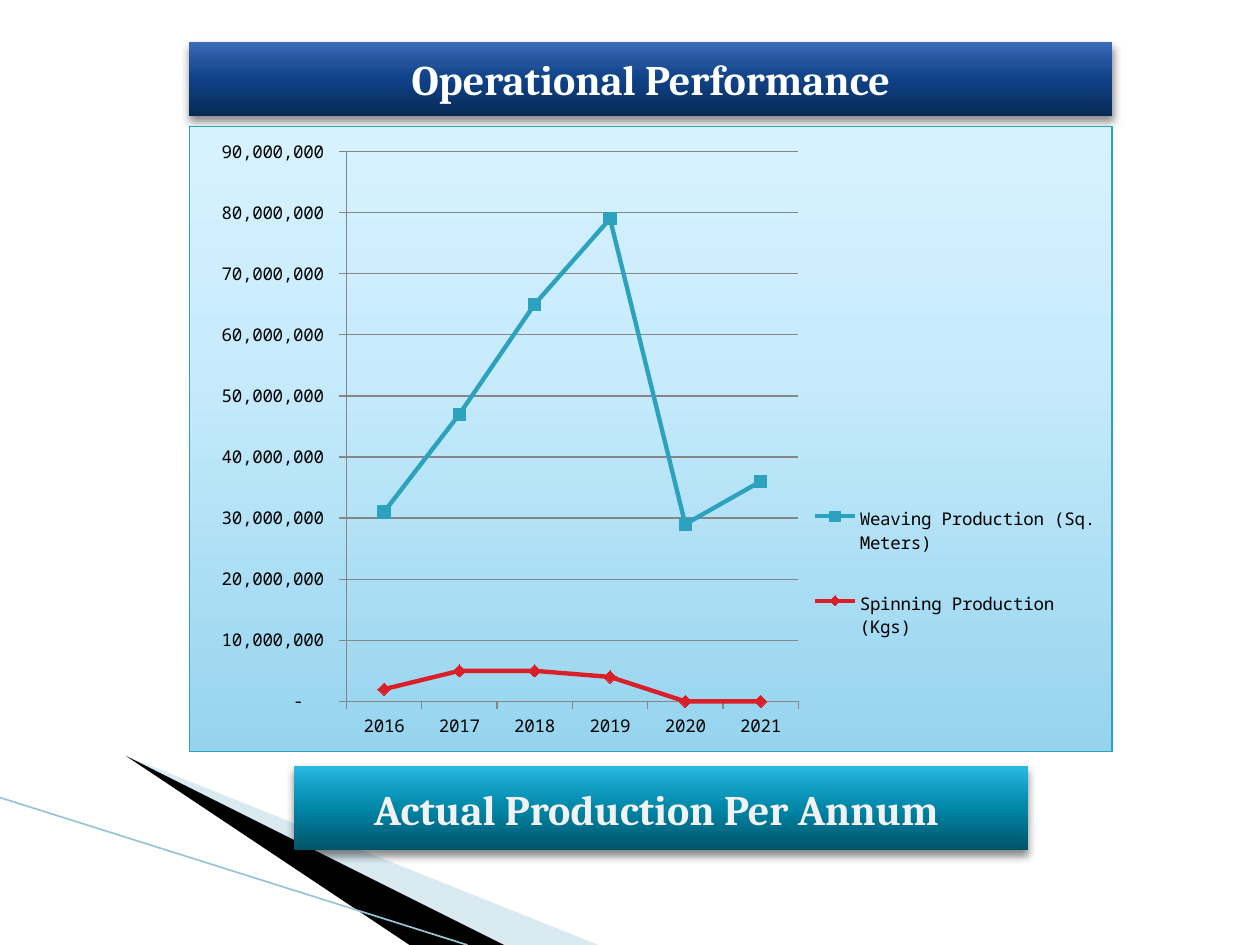
from lxml import etree
from pptx import Presentation
from pptx.chart.data import CategoryChartData
from pptx.dml.color import RGBColor
from pptx.enum.chart import XL_CHART_TYPE, XL_LEGEND_POSITION, XL_MARKER_STYLE, XL_TICK_MARK
from pptx.enum.shapes import MSO_CONNECTOR, MSO_SHAPE
from pptx.enum.text import MSO_ANCHOR, PP_ALIGN
from pptx.oxml import parse_xml
from pptx.oxml.ns import nsdecls, qn
from pptx.util import Inches, Pt

LINE_MARKERS = XL_CHART_TYPE.LINE_MARKERS
RIGHT = XL_LEGEND_POSITION.RIGHT
SQUARE, DIAMOND = XL_MARKER_STYLE.SQUARE, XL_MARKER_STYLE.DIAMOND
OUTSIDE = XL_TICK_MARK.OUTSIDE
STRAIGHT = MSO_CONNECTOR.STRAIGHT
RECTANGLE = MSO_SHAPE.RECTANGLE
MIDDLE = MSO_ANCHOR.MIDDLE
CENTER = PP_ALIGN.CENTER

COLORS = {
    "black": "000000", "white": "FFFFFF", "off_white": "F2F2F2",
    "pale_blue": "A0CBDC", "edge": "97C5D8", "grid": "868686",
    "weaving": "2DA2BF", "spinning": "DA1F28",
}
NAVY = [(0, "072956"), (50, "104288"), (70, "205199"), (100, "3D6BB9")]
TEAL = [(0, "005367"), (50, "0086A7"), (70, "0E9ABE"), (100, "2CB9E3")]
SKY = [(0, "96D4EE"), (65, "C9ECFC"), (100, "D7F2FF")]

YEARS = ["2016", "2017", "2018", "2019", "2020", "2021"]
SERIES = [
    ("Weaving Production (Sq. Meters)", "weaving", SQUARE,
     [31000000, 47000000, 65000000, 79000000, 29000000, 36000000]),
    ("Spinning Production (Kgs)", "spinning", DIAMOND,
     [2000000, 5000000, 5000000, 4000000, 0, 0]),
]
NUMBER_FORMAT = '_(* #,##0_);_(* \\(#,##0\\);_(* "-"??_);_('


def color(name):
    return RGBColor.from_string(COLORS[name])


def gradient(stops):
    marks = "".join(
        f'<a:gs pos="{position * 1000}"><a:srgbClr val="{value}"/></a:gs>'
        for position, value in stops)
    return parse_xml(
        f'<a:gradFill {nsdecls("a")} rotWithShape="1"><a:gsLst>{marks}</a:gsLst>'
        '<a:lin ang="16200000" scaled="0"/></a:gradFill>')


def add_wedge(page, points, name, opacity=100):
    builder = page.shapes.build_freeform(*points[0], scale=Inches(1))
    builder.add_line_segments(points[1:], close=True)
    wedge = builder.convert_to_shape()
    wedge.shadow.inherit = False
    wedge.line.fill.background()
    wedge.fill.solid()
    wedge.fill.fore_color.rgb = color(name)
    if opacity < 100:
        shade = wedge._element.spPr.find(".//" + qn("a:srgbClr"))
        etree.SubElement(shade, qn("a:alpha"), val=str(opacity * 1000))


def add_edge(page, start, end):
    edge = page.shapes.add_connector(STRAIGHT, *map(Inches, start + end))
    edge.line.color.rgb = color("edge")
    edge.line.width = Pt(0.95)
    etree.SubElement(edge._element.spPr, qn("a:effectLst"))


def add_banner(page, area, text, stops, font_color):
    banner = page.shapes.add_shape(RECTANGLE, *map(Inches, area))
    banner.line.fill.background()
    properties = banner._element.spPr
    properties.find(qn("a:prstGeom")).addnext(gradient(stops))
    properties.append(parse_xml(
        f'<a:effectLst {nsdecls("a")}><a:outerShdw blurRad="{Pt(5)}" dist="{Pt(3)}" '
        'dir="5400000" rotWithShape="0"><a:srgbClr val="000000">'
        '<a:alpha val="45000"/></a:srgbClr></a:outerShdw></a:effectLst>'))
    frame = banner.text_frame
    frame.word_wrap = True
    frame.vertical_anchor = MIDDLE
    para = frame.paragraphs[0]
    para.alignment = CENTER
    span = para.add_run()
    span.text = text
    span.font.name = "Cambria"
    span.font.size = Pt(24)
    span.font.bold = True
    span.font.color.rgb = color(font_color)


def manual_layout(x, y, width, height, inner=False):
    target = '<c:layoutTarget val="inner"/>' if inner else ""
    return parse_xml(
        f'<c:layout {nsdecls("c")}><c:manualLayout>{target}'
        '<c:xMode val="edge"/><c:yMode val="edge"/>'
        f'<c:x val="{x}"/><c:y val="{y}"/><c:w val="{width}"/><c:h val="{height}"/>'
        '</c:manualLayout></c:layout>')


def set_layout(parent, layout, before):
    for old in parent.findall(qn("c:layout")):
        parent.remove(old)
    if before is None:
        parent.insert(0, layout)
    else:
        parent.find(qn(before)).addnext(layout)


def style_chart_area(chart):
    area = parse_xml(
        f'<c:spPr {nsdecls("c", "a")}><a:ln w="{Pt(0.75)}"><a:solidFill>'
        f'<a:srgbClr val="{COLORS["weaving"]}"/></a:solidFill></a:ln></c:spPr>')
    area.insert(0, gradient(SKY))
    chart._chartSpace.find(qn("c:chart")).addnext(area)


def style_series(series, name, marker):
    series.smooth = False
    series.format.line.color.rgb = color(name)
    series.format.line.width = Pt(2.5)
    series.marker.style = marker
    series.marker.size = 7
    series.marker.format.fill.solid()
    series.marker.format.fill.fore_color.rgb = color(name)
    series.marker.format.line.color.rgb = color(name)


def style_axes(chart):
    for axis in (chart.category_axis, chart.value_axis):
        axis.major_tick_mark = OUTSIDE
        axis.format.line.color.rgb = color("grid")
    values = chart.value_axis
    values.minimum_scale, values.maximum_scale = 0, 90000000
    values.major_unit = 10000000
    values.has_major_gridlines = True
    values.major_gridlines.format.line.color.rgb = color("grid")
    values.tick_labels.number_format = NUMBER_FORMAT
    values.tick_labels.number_format_is_linked = False


def add_production_chart(page, area):
    data = CategoryChartData(number_format=NUMBER_FORMAT)
    data.categories = YEARS
    for label, _, _, values in SERIES:
        data.add_series(label, values)
    chart = page.shapes.add_chart(LINE_MARKERS, *map(Inches, area), data).chart
    chart.has_title = False
    chart.font.name = "Noto Sans Mono"
    chart.font.size = Pt(10)
    chart.font.color.rgb = color("black")
    chart.plots[0].vary_by_categories = False
    for series, (_, name, marker, _) in zip(chart.plots[0].series, SERIES):
        style_series(series, name, marker)
    style_axes(chart)
    chart.has_legend = True
    chart.legend.position = RIGHT
    chart.legend.include_in_layout = False
    plot_area = chart._chartSpace.find(".//" + qn("c:plotArea"))
    set_layout(plot_area, manual_layout(0.17, 0.04, 0.49, 0.88, inner=True), None)
    set_layout(chart.legend._element, manual_layout(0.67, 0.55, 0.32, 0.33), "c:legendPos")
    style_chart_area(chart)


def main():
    deck = Presentation()
    deck.slide_width, deck.slide_height = Inches(10), Inches(7.5)
    page = deck.slides.add_slide(deck.slide_layouts[6])
    add_wedge(page, [(0.55, 6.5), (5.95, 7.5), (4.56, 7.5)], "pale_blue", 40)
    add_wedge(page, [(0.53, 6.49), (4.57, 7.5), (3.72, 7.5)], "black")
    add_edge(page, (0, 6.33), (3.71, 7.5))
    add_banner(page, (1.5, 0.33, 7.33, 0.59), "Operational Performance", NAVY, "white")
    add_production_chart(page, (1.5, 1, 7.33, 4.97))
    add_banner(page, (2.33, 6.08, 5.83, 0.67), "Actual Production Per Annum ", TEAL, "off_white")
    deck.save("out.pptx")


if __name__ == "__main__":
    main()
